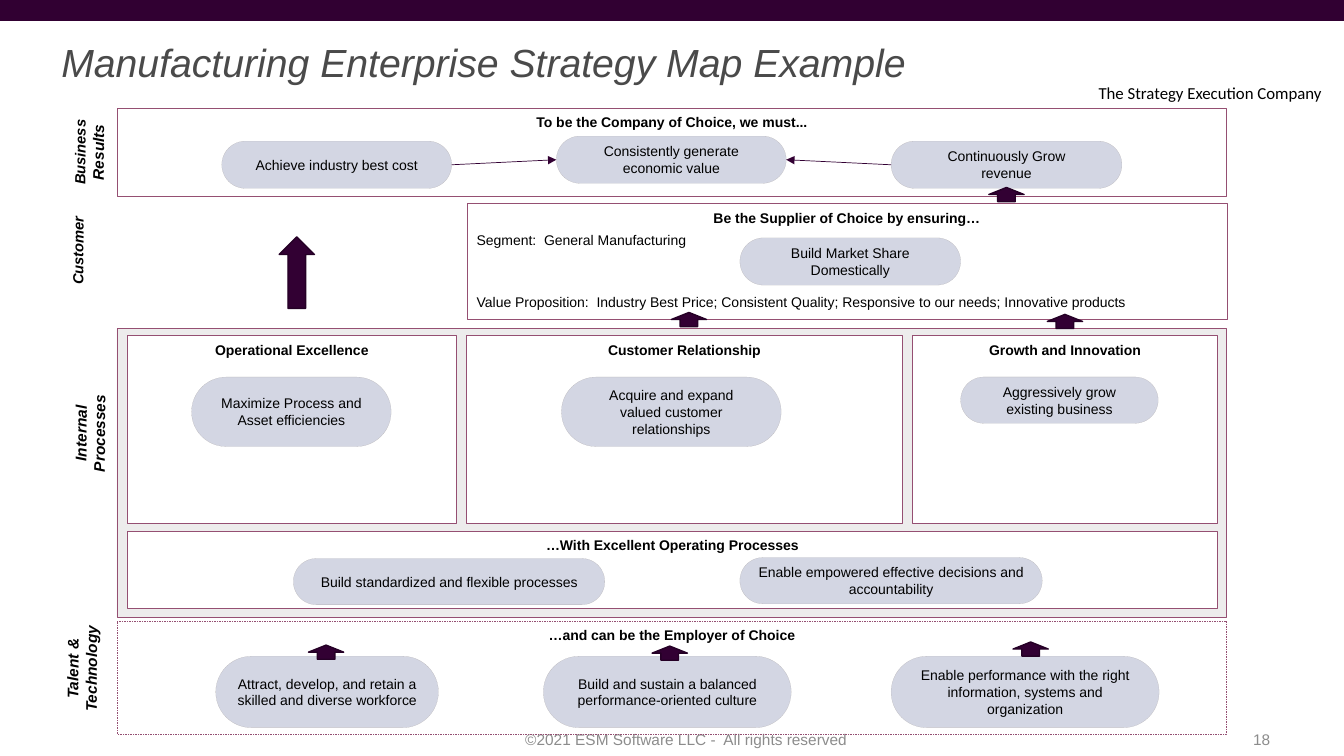
from lxml import etree
from pptx import Presentation
from pptx.dml.color import RGBColor
from pptx.enum.dml import MSO_LINE
from pptx.enum.shapes import MSO_CONNECTOR, MSO_SHAPE
from pptx.enum.text import MSO_ANCHOR, PP_ALIGN
from pptx.oxml.ns import qn
from pptx.util import Pt

RECTANGLE, PILL, UP_ARROW = MSO_SHAPE.RECTANGLE, MSO_SHAPE.ROUNDED_RECTANGLE, MSO_SHAPE.UP_ARROW
STRAIGHT, DASH = MSO_CONNECTOR.STRAIGHT, MSO_LINE.DASH
TOP, MIDDLE = MSO_ANCHOR.TOP, MSO_ANCHOR.MIDDLE
LEFT, CENTER, RIGHT = PP_ALIGN.LEFT, PP_ALIGN.CENTER, PP_ALIGN.RIGHT
PILL_LEFT_SITE, PILL_RIGHT_SITE = 1, 3

COLORS = {
    "bar": "310032", "arrow": "320033", "arrow edge": "250026",
    "panel edge": "954F72", "panel": "FFFFFF", "backdrop": "E7E6E6",
    "pill": "D3D6E3", "pill edge": "AFABAB",
    "text": "000000", "title": "4A4A4A", "footer": "8C8C8C",
}


class StrategyMap:
    def __init__(self, slide):
        self.slide = slide
        self.font = "Arial"

    def color(self, name):
        return RGBColor.from_string(COLORS[name])

    def shape(self, kind, box, fill=None, line=None, width=0.25):
        shape = self.slide.shapes.add_shape(kind, *map(Pt, box))
        shape.shadow.inherit = False
        if fill:
            shape.fill.solid()
            shape.fill.fore_color.rgb = self.color(fill)
        else:
            shape.fill.background()
        if line:
            shape.line.color.rgb = self.color(line)
            shape.line.width = Pt(width)
        else:
            shape.line.fill.background()
        return shape

    def frame(self, shape, anchor, insets):
        """Set wrapping, anchor and (horizontal, vertical) insets."""
        frame = shape.text_frame
        frame.word_wrap = True
        frame.vertical_anchor = anchor
        frame.margin_left = frame.margin_right = Pt(insets[0])
        frame.margin_top = frame.margin_bottom = Pt(insets[1])
        return frame

    def add_runs(self, paragraph, text, size=10, color="text", align=CENTER,
                 bold=False, italic=False, font=None):
        paragraph.alignment = align
        for number, line in enumerate(text.split("\n")):
            if number:
                paragraph.add_line_break()
            run = paragraph.add_run()
            run.text = line
            run.font.name = font or self.font
            run.font.size = Pt(size)
            run.font.bold = bold
            run.font.italic = italic
            run.font.color.rgb = self.color(color)

    def text(self, box, text, anchor=TOP, **style):
        shape = self.slide.shapes.add_textbox(*map(Pt, box))
        paragraph = self.frame(shape, anchor, (7.2, 3.6)).paragraphs[0]
        self.add_runs(paragraph, text, **style)
        return paragraph

    def row_label(self, box, *runs):
        """Add a label turned to read upwards; runs are (text, size) pairs."""
        shape = self.slide.shapes.add_textbox(*map(Pt, box))
        shape.rotation = 270.3
        paragraph = self.frame(shape, MIDDLE, (0, 0)).paragraphs[0]
        for text, size in runs:
            self.add_runs(paragraph, text, size, bold=True, italic=True)

    def panel(self, box, heading, fill=None, width=0.25):
        shape = self.shape(RECTANGLE, box, fill, "panel edge", width)
        frame = self.frame(shape, TOP, (7.2, 4))
        self.add_runs(frame.paragraphs[0], heading, bold=True)
        return shape

    def pill(self, box, text):
        shape = self.shape(PILL, box, "pill", "pill edge", 0.05)
        shape.adjustments[0] = 0.5
        self.add_runs(self.frame(shape, MIDDLE, (7.2, 0)).paragraphs[0], text)
        return shape

    def up_arrow(self, left, top, height=10.1):
        self.shape(UP_ARROW, (left, top, 25.2, height), "arrow", "arrow edge", 1)

    def link(self, source, source_site, target, target_site):
        connector = self.slide.shapes.add_connector(STRAIGHT, 0, 0, 0, 0)
        connector.begin_connect(source, source_site)
        connector.end_connect(target, target_site)
        connector.line.color.rgb = self.color("arrow")
        connector.line.width = Pt(0.5)
        properties = connector.element.spPr
        etree.SubElement(properties.find(qn("a:ln")), qn("a:tailEnd"), type="triangle")
        etree.SubElement(properties, qn("a:effectLst"))

    def backdrop(self, box, opacity):
        shape = self.shape(RECTANGLE, box, "backdrop", "panel edge")
        fill_color = shape.element.spPr.find(qn("a:solidFill"))[0]
        etree.SubElement(fill_color, qn("a:alpha"), val=str(opacity * 1000))


def add_page_frame(page):
    page.shape(RECTANGLE, (0, 0, 960, 15), "bar")
    page.text((777.6, 55.4, 182.2, 21.6), "The Strategy Execution Company",
              size=12, align=LEFT, font="Calibri")
    page.text((328.3, 513.4, 324, 28.8), "©2021 ESM Software LLC -  All rights reserved",
              MIDDLE, size=11, color="footer")
    page.text((698.4, 513.4, 216, 28.8), "18", MIDDLE, size=11, color="footer", align=RIGHT)
    title = page.text((36.7, 27.4, 666, 36), "Manufacturing Enterprise Strategy Map Example",
                      size=28, color="title", align=LEFT, italic=True)
    title.line_spacing = 0.9


def add_business_results(page):
    page.panel((83.5, 77, 792.7, 63.4), "To be the Company of Choice, we must...")
    page.row_label((37.4, 92.9, 51.8, 31.7), ("Business", 10.5), (" Results", 11))
    value = page.pill((397.4, 97.2, 164.2, 33.8), "Consistently generate economic value")
    cost = page.pill((158.4, 100.8, 164.2, 33.8), "Achieve industry best cost")
    revenue = page.pill((636.5, 100.8, 164.9, 33.8), "Continuously Grow\nrevenue")
    page.link(cost, PILL_RIGHT_SITE, value, PILL_LEFT_SITE)
    page.link(revenue, PILL_LEFT_SITE, value, PILL_RIGHT_SITE)


def add_customer(page):
    page.row_label((26.6, 171.4, 57.6, 15.1), ("Customer", 10.5))
    panel = page.panel((333.4, 145.4, 542.9, 82.8), "Be the Supplier of Choice by ensuring…")
    segment = panel.text_frame.add_paragraph()
    segment.space_before = Pt(4)
    page.add_runs(segment, "Segment:  General Manufacturing", align=LEFT)
    page.text((333.4, 205.9, 542.9, 19.4),
              "Value Proposition:  Industry Best Price; Consistent Quality; "
              "Responsive to our needs; Innovative products", align=LEFT)
    page.pill((528.5, 169.9, 157.7, 33.8), "Build Market Share Domestically")


def add_internal_processes(page):
    page.backdrop((83.5, 234.7, 792.7, 205.9), 75)
    page.row_label((2.9, 293.8, 122.4, 31.7), ("Internal\nProcesses", 11))
    left, gap = 90.7, 7.25
    for heading, width in (("Operational Excellence", 235.4),
                           ("Customer Relationship", 311),
                           ("Growth and Innovation", 218.2)):
        page.panel((left, 239.8, width, 133.9), heading, "panel", 0.5)
        left += width + gap
    page.panel((90.7, 379.4, 779, 55.4), "…With Excellent Operating Processes", "panel", 0.5)
    for box, text in (
        ((136.8, 269.3, 142.6, 49.7), "Maximize Process and Asset efficiencies"),
        ((401, 269.3, 157, 49.7), "Acquire and expand\nvalued customer relationships"),
        ((686.2, 269.3, 141.1, 33.1), "Aggressively grow existing business"),
        ((528.5, 398.2, 216, 33.1), "Enable empowered effective decisions and accountability"),
        ((209.5, 398.9, 222.5, 33.1), "Build standardized and flexible processes"),
    ):
        page.pill(box, text)


def add_talent_and_technology(page):
    page.row_label((21.6, 464.4, 73.4, 26.6), ("Talent & Technology", 11))
    panel = page.panel((83.5, 443.5, 792.7, 80.6), "…and can be the Employer of Choice")
    panel.line.dash_style = DASH
    for left, width, text in (
        (154.1, 159.1, "Attract, develop, and retain a skilled and diverse workforce"),
        (388.1, 177.1, "Build and sustain a balanced performance-oriented culture"),
        (636.5, 191.5, "Enable performance with the right information, systems and organization"),
    ):
        page.pill((left, 468.7, width, 51.1), text)


def add_up_arrows(page):
    page.up_arrow(199.4, 169.2, 51.1)
    for left, top in ((723.6, 458.6), (465.8, 461.5), (220.3, 460.8),
                      (479.5, 223.2), (748.1, 224.6), (706.3, 133.9)):
        page.up_arrow(left, top)


def main():
    presentation = Presentation()
    presentation.slide_width, presentation.slide_height = Pt(960), Pt(540)
    blank_layout = presentation.slide_layouts[6]
    page = StrategyMap(presentation.slides.add_slide(blank_layout))
    add_page_frame(page)
    add_business_results(page)
    add_talent_and_technology(page)
    add_internal_processes(page)
    add_customer(page)
    add_up_arrows(page)
    presentation.save("out.pptx")


if __name__ == "__main__":
    main()
